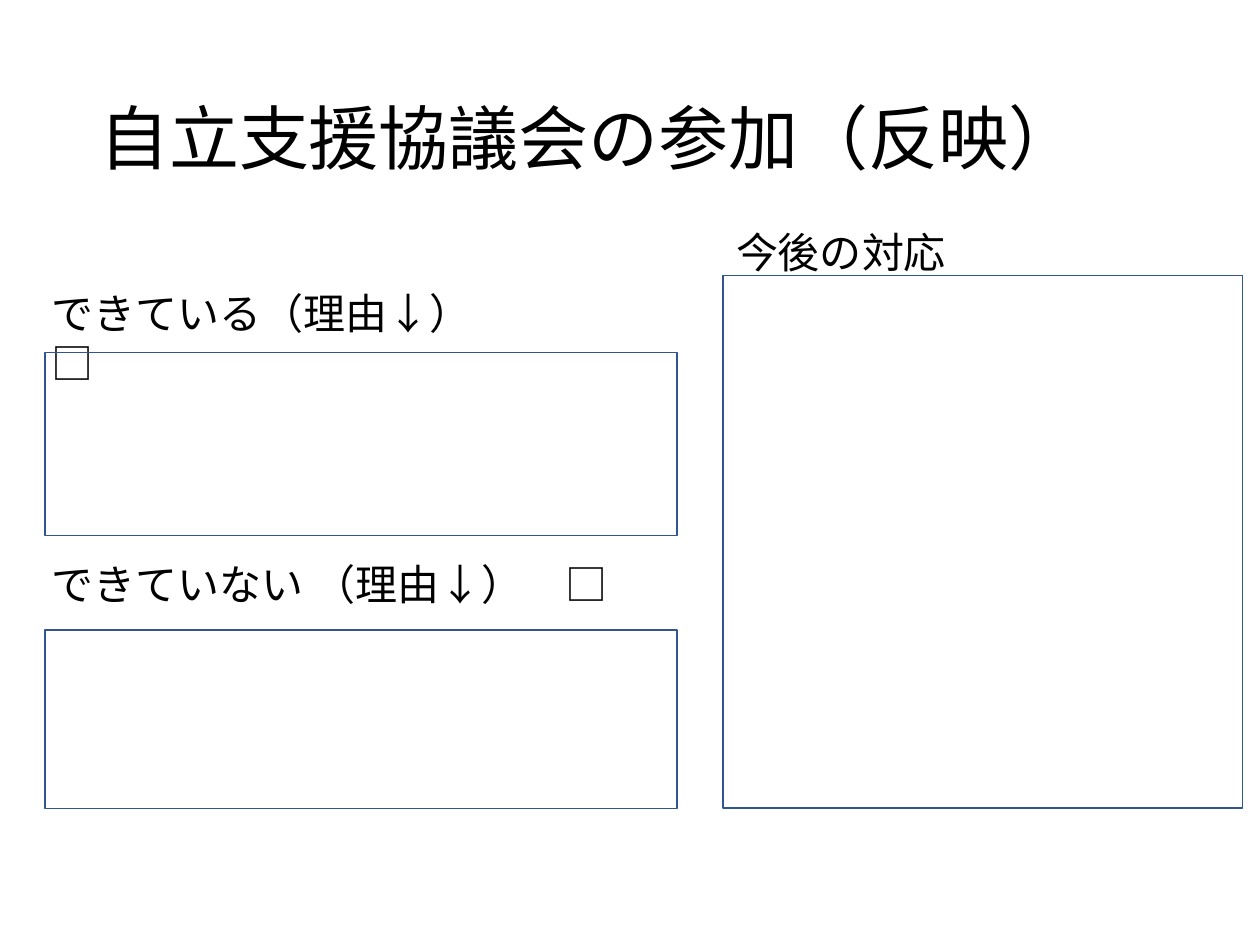
from pptx import Presentation
from pptx.dml.color import RGBColor
from pptx.enum.shapes import MSO_SHAPE
from pptx.enum.text import MSO_ANCHOR, PP_ALIGN
from pptx.util import Pt

COLORS = {"text": "000000", "frame": "325491"}
FONT = "Calibri"


def write(shape, text, size):
    frame = shape.text_frame
    frame.word_wrap = True
    frame.text = text
    line = frame.paragraphs[0]
    line.alignment = PP_ALIGN.LEFT
    font = line.runs[0].font
    font.name, font.size = FONT, Pt(size)
    font.color.rgb = RGBColor.from_string(COLORS["text"])


deck = Presentation()
deck.slide_width, deck.slide_height = Pt(720), Pt(540)
slide = deck.slides.add_slide(deck.slide_layouts[5])

# Title
title = slide.shapes.title
title.left, title.top, title.width, title.height = Pt(49.5), Pt(28.75), Pt(621), Pt(104.4)
write(title, "自立支援協議会の参加（反映）", 40)
title.text_frame.vertical_anchor = MSO_ANCHOR.MIDDLE
title.text_frame.paragraphs[0].line_spacing = 0.9

# Labels: text, left, top, width
labels = [
    ("できている（理由↓）　　□", 22.5, 160.5, 325.5),
    ("できていない （理由↓）　□", 22.5, 315.5, 400),
    ("今後の対応", 413.5, 126, 178.5),
]
for text, left, top, width in labels:
    label = slide.shapes.add_textbox(Pt(left), Pt(top), Pt(width), Pt(36))
    write(label, text, 24)

# Answer frames: left, top, width, height
frames = [
    (25.5, 360, 361.5, 102),
    (25.5, 201.5, 361.5, 104.5),
    (413, 157.5, 297, 304.2),
]
for left, top, width, height in frames:
    box = slide.shapes.add_shape(
        MSO_SHAPE.RECTANGLE, Pt(left), Pt(top), Pt(width), Pt(height))
    box.shadow.inherit = False
    box.fill.background()
    box.line.color.rgb = RGBColor.from_string(COLORS["frame"])
    box.line.width = Pt(1)

deck.save("out.pptx")
